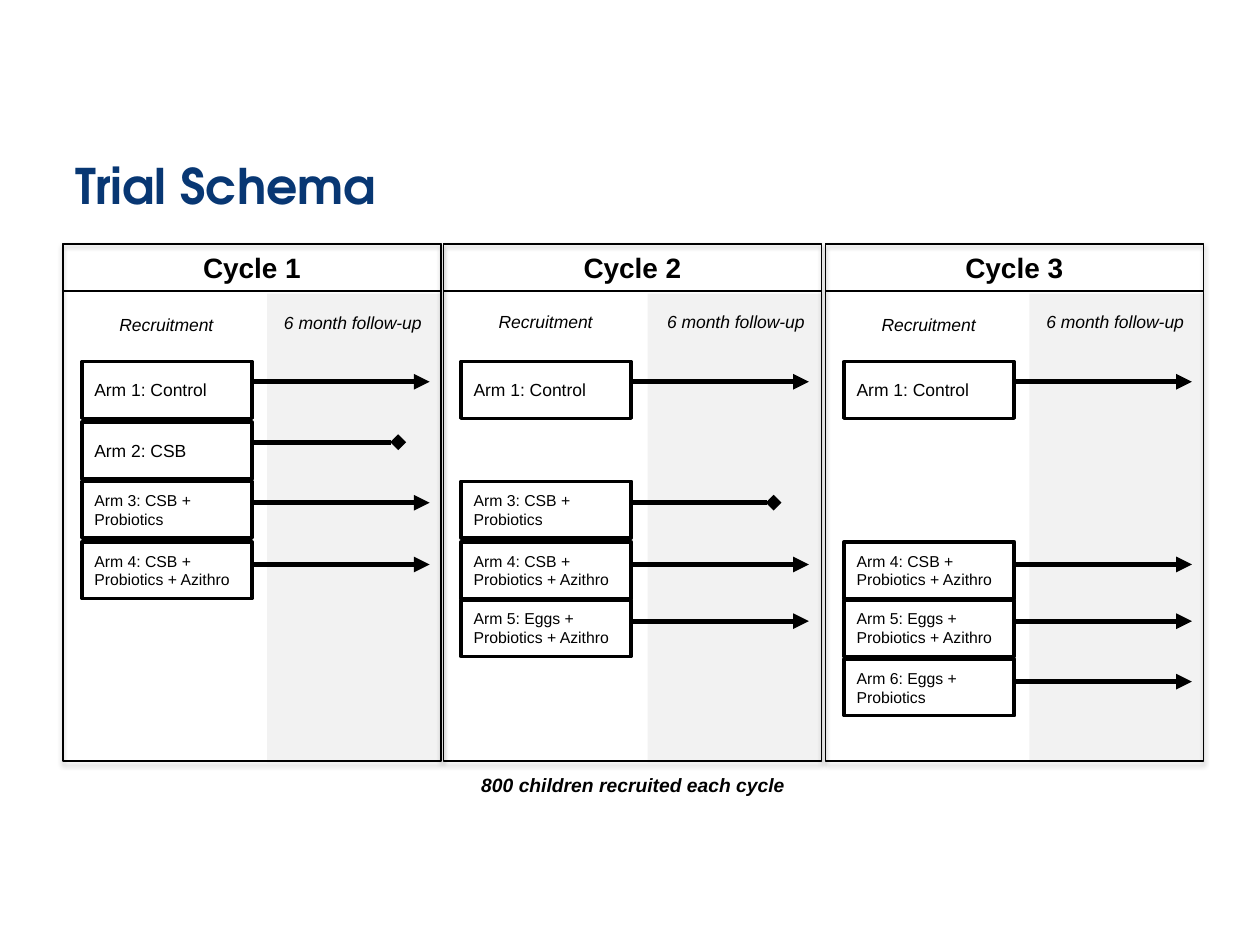
from dataclasses import dataclass
from typing import Optional

from lxml import etree
from pptx import Presentation
from pptx import util as u
from pptx.dml.color import RGBColor
from pptx.enum import shapes, text
from pptx.oxml import ns

PX = 9144  # EMU; 100 px to the inch
BLACK, WHITE, GREY, NAVY = "000000", "FFFFFF", "F2F2F2", "083773"
COLUMN_WIDTH = 300
ARM_WIDTH, ARM_HEIGHT = 135, 45
ARROW_LENGTH = 141


@dataclass(frozen=True)
class Arm:
    name: str
    top: int
    arrow_y: int
    size: int = 9


@dataclass(frozen=True)
class Cycle:
    title: str
    left: int
    arm_left: int
    recruitment: tuple[int, int]
    follow_up: tuple[int, int]
    arms: tuple[int, ...]
    stopped_arm: Optional[int] = None
    stopped_length: int = 0


ARMS = {
    1: Arm("Arm 1: Control", 287, 303, 10),
    2: Arm("Arm 2: CSB", 335, 351, 10),
    3: Arm("Arm 3: CSB + Probiotics", 382, 399),
    4: Arm("Arm 4: CSB + Probiotics + Azithro", 430, 448),
    5: Arm("Arm 5: Eggs + Probiotics + Azithro", 476, 493),
    6: Arm("Arm 6: Eggs + Probiotics", 523, 541),
}
CYCLES = (
    Cycle("Cycle 1", 50, 65, (54, 244), (202, 243), (1, 2, 3, 4), 2, 116),
    Cycle("Cycle 2", 352, 366, (355, 242), (506, 242), (1, 3, 4, 5), 3, 113),
    Cycle("Cycle 3", 655, 670, (659, 244), (807, 242), (1, 4, 5, 6)),
)


def rgb(value: str) -> RGBColor:
    return RGBColor.from_string(value)


def px(*lengths: int) -> list[u.Emu]:
    return [u.Emu(length * PX) for length in lengths]


def write(shape, words: str, size: int, align=text.PP_ALIGN.CENTER, bold=False,
          italic=False, color: str = BLACK, font: str = "Arial") -> None:
    shape.text_frame.word_wrap = True
    paragraph = shape.text_frame.paragraphs[0]
    paragraph.alignment = align
    run = paragraph.add_run()
    run.text = words
    run.font.name, run.font.size = font, u.Pt(size)
    run.font.bold, run.font.italic = bold, italic
    run.font.color.rgb = rgb(color)


def add_box(parent, left: int, top: int, width: int, height: int,
            fill: Optional[str] = None, line: Optional[float] = None):
    shape = parent.add_shape(shapes.MSO_SHAPE.RECTANGLE, *px(left, top, width, height))
    shape.shadow.inherit = False
    if fill:
        shape.fill.solid()
        shape.fill.fore_color.rgb = rgb(fill)
    else:
        shape.fill.background()
    if line:
        shape.line.color.rgb = rgb(BLACK)
        shape.line.width = u.Pt(line)
    else:
        shape.line.fill.background()
    return shape


def add_label(parent, left: int, top: int, width: int, height: int,
              words: str, size: int, bold=False) -> None:
    label = parent.add_textbox(*px(left, top, width, height))
    write(label, words, size, bold=bold, italic=True)
    label.text_frame.auto_size = text.MSO_AUTO_SIZE.SHAPE_TO_FIT_TEXT


def add_arrow(parent, left: int, y: int, length: int, head: str) -> None:
    arrow = parent.add_connector(shapes.MSO_CONNECTOR.STRAIGHT, *px(left, y, left + length, y))
    arrow.line.color.rgb = rgb(BLACK)
    arrow.line.width = u.Pt(3)
    etree.SubElement(arrow.line._get_or_add_ln(), ns.qn("a:tailEnd"), type=head)
    etree.SubElement(arrow._element.spPr, ns.qn("a:effectLst"))


def add_soft_shadow(shape) -> None:
    effects = shape._element.spPr.find(ns.qn("a:effectLst"))
    shadow = etree.SubElement(effects, ns.qn("a:outerShdw"), blurRad=str(u.Pt(3.1)),
                              dist=str(u.Pt(1.8)), dir="5400000", rotWithShape="0")
    color = etree.SubElement(shadow, ns.qn("a:srgbClr"), val=BLACK)
    etree.SubElement(color, ns.qn("a:alpha"), val="35000")


def add_cycle(slide, cycle: Cycle) -> None:
    group = slide.shapes.add_group_shape().shapes
    header = add_box(group, cycle.left, 194, COLUMN_WIDTH, 37, line=0.75)
    write(header, cycle.title, 16, bold=True)
    header.text_frame.vertical_anchor = text.MSO_ANCHOR.TOP
    header.text_frame.auto_size = text.MSO_AUTO_SIZE.SHAPE_TO_FIT_TEXT
    add_box(group, cycle.left + 162, 233, 139, 372, fill=GREY)
    add_label(group, *cycle.recruitment, 156, 27, "Recruitment", 10)
    add_label(group, *cycle.follow_up, 156, 27, "6 month follow-up", 10)
    for number in cycle.arms:
        arm = ARMS[number]
        box = add_box(group, cycle.arm_left, arm.top, ARM_WIDTH, ARM_HEIGHT, WHITE, 2)
        write(box, arm.name, arm.size, text.PP_ALIGN.LEFT)
        box.text_frame.vertical_anchor = text.MSO_ANCHOR.MIDDLE
        stopped = number == cycle.stopped_arm
        add_arrow(group, cycle.arm_left + ARM_WIDTH, arm.arrow_y,
                  cycle.stopped_length if stopped else ARROW_LENGTH,
                  "diamond" if stopped else "triangle")
    add_soft_shadow(add_box(group, cycle.left, 193, COLUMN_WIDTH, 411, line=0.75))


def main() -> None:
    presentation = Presentation()
    presentation.slide_width, presentation.slide_height = px(1000, 750)
    slide = presentation.slides.add_slide(presentation.slide_layouts[5])
    title = slide.shapes.title
    title.left, title.top, title.width, title.height = px(50, 116, 900, 62)
    write(title, "Trial Schema", 28, text.PP_ALIGN.LEFT, bold=True,
          color=NAVY, font="TeX Gyre Adventor")
    title.text_frame.vertical_anchor = text.MSO_ANCHOR.MIDDLE
    for cycle in CYCLES:
        add_cycle(slide, cycle)
    add_label(slide.shapes, 50, 609, 905, 29, "800 children recruited each cycle", 11, bold=True)
    presentation.save("out.pptx")


if __name__ == "__main__":
    main()
